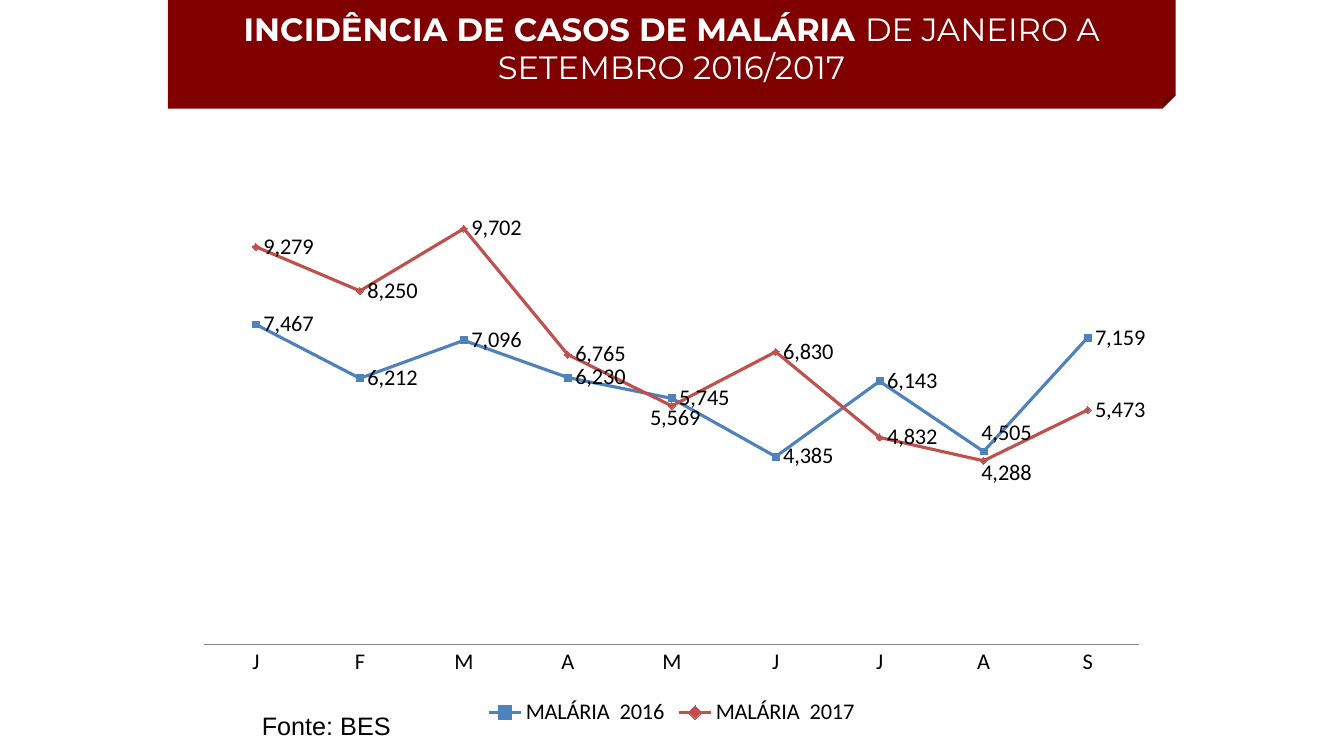
from dataclasses import dataclass, field

from lxml.etree import SubElement
from pptx import Presentation
from pptx.chart.chart import Chart
from pptx.chart.data import CategoryChartData
from pptx.chart.series import LineSeries
from pptx.dml.color import RGBColor
from pptx.enum.chart import XL_CHART_TYPE as ChartType
from pptx.enum.chart import XL_LABEL_POSITION as LabelPosition
from pptx.enum.chart import XL_LEGEND_POSITION as LegendPosition
from pptx.enum.chart import XL_MARKER_STYLE as MarkerStyle
from pptx.enum.chart import XL_TICK_MARK as TickMark
from pptx.enum.shapes import MSO_SHAPE as ShapeKind
from pptx.enum.text import MSO_ANCHOR as Anchor
from pptx.enum.text import PP_ALIGN as Align
from pptx.oxml import parse_xml
from pptx.oxml.ns import nsdecls, qn
from pptx.slide import Slide
from pptx.text.text import Font
from pptx.util import Cm, Pt


@dataclass(frozen=True)
class Theme:
    banner: RGBColor = RGBColor(0x80, 0x00, 0x00)
    banner_text: RGBColor = RGBColor(0xFF, 0xFF, 0xFF)
    text: RGBColor = RGBColor(0x00, 0x00, 0x00)
    axis: RGBColor = RGBColor(0x86, 0x86, 0x86)
    year_2016: RGBColor = RGBColor(0x4F, 0x81, 0xBD)
    year_2017: RGBColor = RGBColor(0xC0, 0x50, 0x4D)
    title_size: Pt = Pt(23)
    source_size: Pt = Pt(18)
    chart_size: Pt = Pt(16)
    title_font: str = "Montserrat"
    source_font: str = "Arial"
    chart_font: str = "Calibri"


@dataclass(frozen=True)
class YearLine:
    name: str
    cases: tuple[int, ...]
    color: RGBColor
    marker: MarkerStyle
    # Month index -> label shift as a share of the chart's width and height
    label_shifts: dict[int, tuple[float, float]] = field(default_factory=dict)


THEME = Theme()
NUMBER_FORMAT = "#,##0"
MONTHS = "JFMAMJJAS"
YEAR_LINES = (
    YearLine("MALÁRIA  2016", (7467, 6212, 7096, 6230, 5745, 4385, 6143, 4505, 7159),
             THEME.year_2016, MarkerStyle.SQUARE, {7: (-0.01, -0.03)}),
    YearLine("MALÁRIA  2017", (9279, 8250, 9702, 6765, 5569, 6830, 4832, 4288, 5473),
             THEME.year_2017, MarkerStyle.DIAMOND, {4: (-0.03, 0.02), 7: (-0.01, 0.02)}),
)


def style_font(font: Font, name: str, size: Pt, color: RGBColor) -> None:
    font.name = name
    font.size = size
    font.color.rgb = color


def add_banner(slide: Slide) -> None:
    banner = slide.shapes.add_shape(ShapeKind.FOLDED_CORNER, Cm(4.23), Cm(0), Cm(25.4), Cm(2.74))
    fold_sizes = banner._element.find(f".//{qn('a:avLst')}")
    fold_sizes.append(parse_xml(f'<a:gd {nsdecls("a")} name="adj" fmla="val 12500"/>'))
    banner.shadow.inherit = False
    banner.fill.solid()
    banner.fill.fore_color.rgb = THEME.banner
    banner.line.fill.background()
    frame = banner.text_frame
    frame.word_wrap = True
    frame.vertical_anchor = Anchor.MIDDLE
    paragraph = frame.paragraphs[0]
    paragraph.alignment = Align.CENTER
    style_font(paragraph.font, THEME.title_font, THEME.title_size, THEME.banner_text)
    for text, bold in (("INCIDÊNCIA DE CASOS DE MALÁRIA ", True),
                       ("DE JANEIRO A SETEMBRO 2016/2017", False)):
        run = paragraph.add_run()
        run.text = text
        run.font.bold = bold


def add_source(slide: Slide) -> None:
    frame = slide.shapes.add_textbox(Cm(6.35), Cm(17.78), Cm(6.99), Cm(1.02)).text_frame
    frame.word_wrap = True
    paragraph = frame.paragraphs[0]
    paragraph.text = "Fonte: BES"
    style_font(paragraph.font, THEME.source_font, THEME.source_size, THEME.text)


def shift_label(series: LineSeries, month: int, shift: tuple[float, float]) -> None:
    """Move one value label away from its place right of the point."""
    label = series.points[month].data_label
    label.position = LabelPosition.RIGHT
    style_font(label.font, THEME.chart_font, THEME.chart_size, THEME.text)
    index = series._element.xpath(f"c:dLbls/c:dLbl/c:idx[@val='{month}']")[0]
    number_format = parse_xml(
        f'<c:numFmt {nsdecls("c")} formatCode="{NUMBER_FORMAT}" sourceLinked="0"/>')
    layout = parse_xml(
        f'<c:layout {nsdecls("c")}><c:manualLayout>'
        f'<c:x val="{shift[0]}"/><c:y val="{shift[1]}"/></c:manualLayout></c:layout>')
    index.addnext(number_format)
    index.addnext(layout)


def style_series(series: LineSeries, year: YearLine) -> None:
    series.smooth = False
    series.format.line.color.rgb = year.color
    series.format.line.width = Pt(2.25)
    marker = series.marker
    marker.style = year.marker
    marker.size = 5
    marker.format.fill.solid()
    marker.format.fill.fore_color.rgb = year.color
    marker.format.line.color.rgb = year.color
    labels = series.data_labels
    labels.show_value = True
    labels.number_format = NUMBER_FORMAT
    labels.number_format_is_linked = False
    labels.position = LabelPosition.RIGHT
    style_font(labels.font, THEME.chart_font, THEME.chart_size, THEME.text)
    for month, shift in year.label_shifts.items():
        shift_label(series, month, shift)


def place_plot(chart: Chart) -> None:
    """Fix the inner plot area as shares of the chart's size."""
    plot_area = chart._chartSpace.chart.plotArea
    for old_layout in plot_area.findall(qn("c:layout")):
        plot_area.remove(old_layout)
    layout = parse_xml(f'<c:layout {nsdecls("c")}/>')
    manual = SubElement(layout, qn("c:manualLayout"))
    for tag, value in (("layoutTarget", "inner"), ("xMode", "edge"), ("yMode", "edge"),
                       ("x", "0.02"), ("y", "0.02"), ("w", "0.96"), ("h", "0.84")):
        SubElement(manual, qn(f"c:{tag}")).set("val", value)
    plot_area.insert(0, layout)


def add_cases_chart(slide: Slide) -> None:
    data = CategoryChartData(number_format=NUMBER_FORMAT)
    data.categories = list(MONTHS)
    for year in YEAR_LINES:
        data.add_series(year.name, year.cases)
    chart = slide.shapes.add_chart(ChartType.LINE_MARKERS, Cm(4.65), Cm(2.97),
                                   Cm(24.56), Cm(15.44), data).chart
    style_font(chart.font, THEME.chart_font, THEME.chart_size, THEME.text)
    chart.has_title = False
    chart.has_legend = True
    chart.legend.position = LegendPosition.BOTTOM
    chart.legend.include_in_layout = False
    plot = chart.plots[0]
    plot.vary_by_categories = False
    month_axis = chart.category_axis
    month_axis.major_tick_mark = TickMark.NONE
    month_axis.minor_tick_mark = TickMark.NONE
    month_axis.format.line.color.rgb = THEME.axis
    case_axis = chart.value_axis
    case_axis.minimum_scale = 0
    case_axis.maximum_scale = 12000
    case_axis.has_major_gridlines = False
    case_axis.visible = False
    case_axis.tick_labels.number_format = NUMBER_FORMAT
    case_axis.tick_labels.number_format_is_linked = False
    for series, year in zip(plot.series, YEAR_LINES):
        style_series(series, year)
    place_plot(chart)


def main() -> None:
    presentation = Presentation()
    presentation.slide_width = Cm(33.87)
    presentation.slide_height = Cm(19.05)
    slide = presentation.slides.add_slide(presentation.slide_layouts[6])
    add_banner(slide)
    add_source(slide)
    add_cases_chart(slide)
    presentation.save("out.pptx")


if __name__ == "__main__":
    main()
